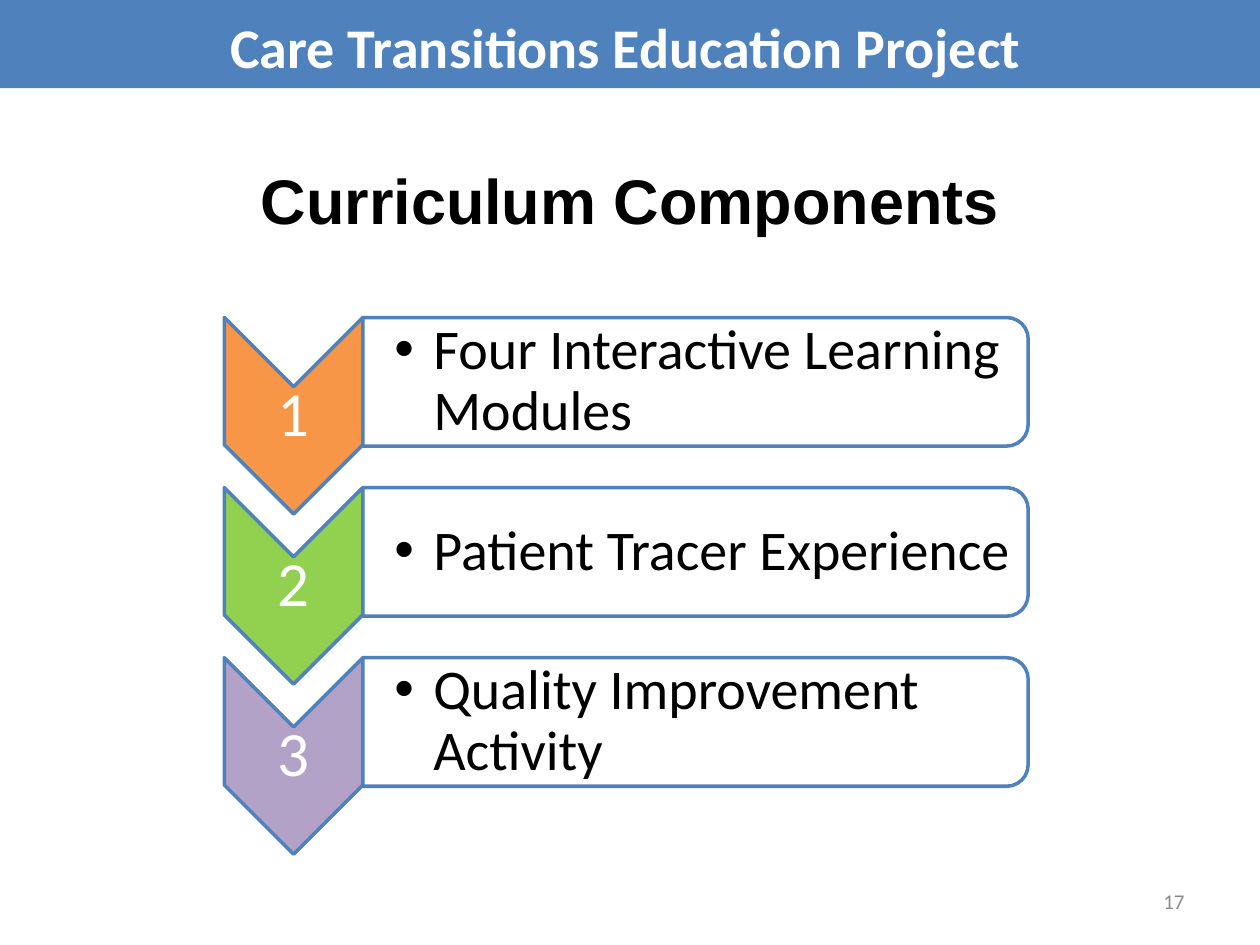
import pptx
import pptx.util
import pptx.dml.color
import pptx.enum.shapes
import pptx.enum.text
from lxml import etree

Inches, Pt = pptx.util.Inches, pptx.util.Pt
RGBColor = pptx.dml.color.RGBColor
SHAPE = pptx.enum.shapes.MSO_SHAPE
ALIGN = pptx.enum.text.PP_ALIGN
ANCHOR = pptx.enum.text.MSO_ANCHOR

BLUE = RGBColor(0x4F, 0x81, 0xBD)
ORANGE = RGBColor(0xF7, 0x96, 0x46)
GREEN = RGBColor(0x92, 0xD0, 0x50)
PURPLE = RGBColor(0xB3, 0xA2, 0xC7)
WHITE = RGBColor(0xFF, 0xFF, 0xFF)
BLACK = RGBColor(0, 0, 0)
GRAY = RGBColor(0x8C, 0x8C, 0x8C)

STEPS = [
    ("1", "Four Interactive Learning Modules", ORANGE),
    ("2", "Patient Tracer Experience", GREEN),
    ("3", "Quality Improvement Activity", PURPLE),
]


def add_tag(parent, name, **attrs):
    return etree.SubElement(parent, pptx.oxml.ns.qn(name), attrs)


def add_form(shapes, kind, left, top, width, height, fill, line=None):
    form = shapes.add_shape(kind, Inches(left), Inches(top), Inches(width), Inches(height))
    form.shadow.inherit = False
    form.fill.solid()
    form.fill.fore_color.rgb = fill
    if line is None:
        form.line.fill.background()
    else:
        form.line.color.rgb = line
        form.line.width = Pt(2)
    return form


def add_turned(shapes, kind, left, top, width, height, fill):
    """Add a shape turned a quarter right so that it fills the given box."""
    shift = (width - height) / 2
    form = add_form(shapes, kind, left + shift, top - shift, height, width, fill, BLUE)
    form.rotation = 90
    return form


def add_text(shapes, text, left, top, width, height, size, color, align,
             font="Calibri", bold=False, anchor=ANCHOR.MIDDLE, insets=(0.1, 0.05, 0.1, 0.05)):
    box = shapes.add_textbox(Inches(left), Inches(top), Inches(width), Inches(height))
    frame = box.text_frame
    frame.word_wrap = True
    frame.vertical_anchor = anchor
    (frame.margin_left, frame.margin_top,
     frame.margin_right, frame.margin_bottom) = map(Inches, insets)
    para = frame.paragraphs[0]
    para.text = text
    para.alignment = align
    para.font.name = font
    para.font.size = Pt(size)
    para.font.bold = bold
    para.font.color.rgb = color
    return para


def add_bullet(para, indent):
    props = para._p.get_or_add_pPr()
    props.set("marL", str(Inches(indent)))
    props.set("indent", str(-Inches(indent)))
    add_tag(props, "a:buFont", typeface="Arial")
    add_tag(props, "a:buChar", char="•")


def add_banner(slide, left, top, width, height):
    add_form(slide.shapes, SHAPE.RECTANGLE, left, top, width, height, BLUE)
    add_text(slide.shapes, "Care Transitions Education Project", left + 1.34, top + 0.05,
             7.25, 0.63, 32, WHITE, ALIGN.CENTER, bold=True, anchor=ANCHOR.TOP)


def add_step(shapes, left, top, width, number, label, color):
    arrow, tall, high = 1.1, 1.56, 1.02
    add_turned(shapes, SHAPE.CHEVRON, left, top, arrow, tall, color)
    mark = add_text(shapes, number, left, top + 0.55, arrow, 0.47, 36, WHITE,
                    ALIGN.CENTER, insets=(0.03,) * 4)
    mark.line_spacing = 0.9

    panel = add_turned(shapes, SHAPE.ROUND_2_SAME_RECTANGLE, left + arrow, top,
                       width - arrow, high, WHITE)
    tint = panel._element.spPr.find(".//" + pptx.oxml.ns.qn("a:srgbClr"))
    add_tag(tint, "a:alpha", val="90000")
    item = add_text(shapes, label, left + arrow, top + 0.05, width - arrow - 0.05,
                    high - 0.1, 32, BLACK, ALIGN.LEFT, insets=(0.25, 0.02, 0.02, 0.02))
    item.level = 1
    item.line_spacing = 0.9
    add_bullet(item, 0.31)


def add_steps(slide, left, top, width, pitch):
    group = slide.shapes.add_group_shape()
    for i, step in enumerate(STEPS):
        add_step(group.shapes, left, top + i * pitch, width, *step)


def main():
    deck = pptx.Presentation()
    deck.slide_width, deck.slide_height = Inches(10), Inches(7.5)
    slide = deck.slides.add_slide(deck.slide_layouts[6])
    add_banner(slide, 0, 0, 10, 0.7)
    add_text(slide.shapes, "17", 7.17, 6.95, 2.33, 0.4, 12, GRAY, ALIGN.RIGHT)
    add_steps(slide, 1.78, 2.52, 6.38, 1.35)
    add_text(slide.shapes, "Curriculum Components", 0.5, 0.96, 9, 1.25, 36, BLACK,
             ALIGN.CENTER, font="Arial", bold=True)
    deck.save("out.pptx")


if __name__ == "__main__":
    main()
